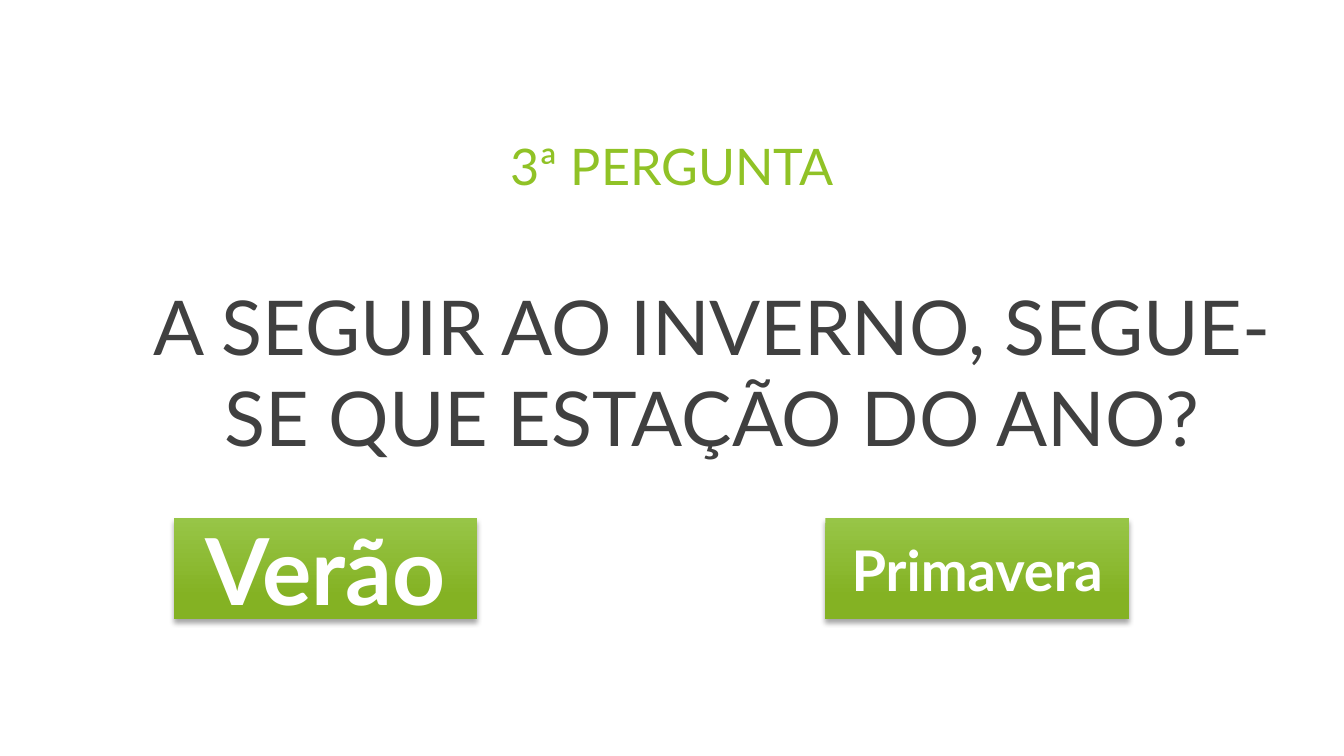
from dataclasses import dataclass

import lxml.etree
import pptx
import pptx.dml.color
import pptx.enum.shapes
import pptx.enum.text
import pptx.oxml
import pptx.oxml.ns
import pptx.util
from pptx.util import Cm


@dataclass(frozen=True)
class Theme:
    font: str = "Lato"
    title_color: str = "90C226"
    question_color: str = "404040"
    answer_color: str = "FFFFFF"
    button_top: str = "97C547"
    button_bottom: str = "84B223"
    title_size: int = 36
    question_size: int = 54
    large_answer_size: int = 66
    small_answer_size: int = 40


theme = Theme()
SHADOW = (
    f'<a:effectLst {pptx.oxml.ns.nsdecls("a")}>'
    '<a:outerShdw blurRad="50800" dist="38100" dir="5400000" rotWithShape="0">'
    '<a:srgbClr val="000000"><a:alpha val="35000"/></a:srgbClr>'
    '</a:outerShdw></a:effectLst>'
)


def write_centered(shape, text, size, color, anchor, bold=False):
    frame = shape.text_frame
    frame.word_wrap = True
    frame.auto_size = pptx.enum.text.MSO_AUTO_SIZE.NONE
    frame.vertical_anchor = anchor
    frame.text = text
    paragraph = frame.paragraphs[0]
    paragraph.alignment = pptx.enum.text.PP_ALIGN.CENTER
    paragraph.font.name = theme.font
    paragraph.font.size = pptx.util.Pt(size)
    paragraph.font.bold = bold
    paragraph.font.color.rgb = pptx.dml.color.RGBColor.from_string(color)


presentation = pptx.Presentation()
presentation.slide_width = Cm(33.87)
presentation.slide_height = Cm(19.05)
slide = presentation.slides.add_slide(presentation.slide_layouts.get_by_name("Title Only"))
TOP = pptx.enum.text.MSO_ANCHOR.TOP
MIDDLE = pptx.enum.text.MSO_ANCHOR.MIDDLE

# Title and question
title = slide.shapes.title
title.left, title.top, title.width, title.height = Cm(5), Cm(3.28), Cm(23.88), Cm(3.66)
write_centered(title, "3ª PERGUNTA", theme.title_size, theme.title_color, TOP)

question = slide.shapes.add_textbox(Cm(3.3), Cm(6.93), Cm(29.31), Cm(6.2))
write_centered(question, "A SEGUIR AO INVERNO, SEGUE-SE QUE ESTAÇÃO DO ANO?",
               theme.question_size, theme.question_color, TOP)

# Answer buttons
answers = [
    ("Verão", 4.38, theme.large_answer_size),
    ("Primavera", 20.8, theme.small_answer_size),
]
for answer, left, size in answers:
    button = slide.shapes.add_shape(pptx.enum.shapes.MSO_SHAPE.RECTANGLE,
                                    Cm(left), Cm(13.06), Cm(7.65), Cm(2.54))
    button.line.fill.background()
    button.fill.gradient()
    button.fill.gradient_angle = 270
    stops = [(0, theme.button_top), (0.78, theme.button_bottom)]
    for stop, (position, color) in zip(button.fill.gradient_stops, stops):
        stop.position = position
        stop.color.rgb = pptx.dml.color.RGBColor.from_string(color)
    button.element.spPr.append(pptx.oxml.parse_xml(SHADOW))
    write_centered(button, answer, size, theme.answer_color, MIDDLE, bold=True)

presentation.save("out.pptx")
